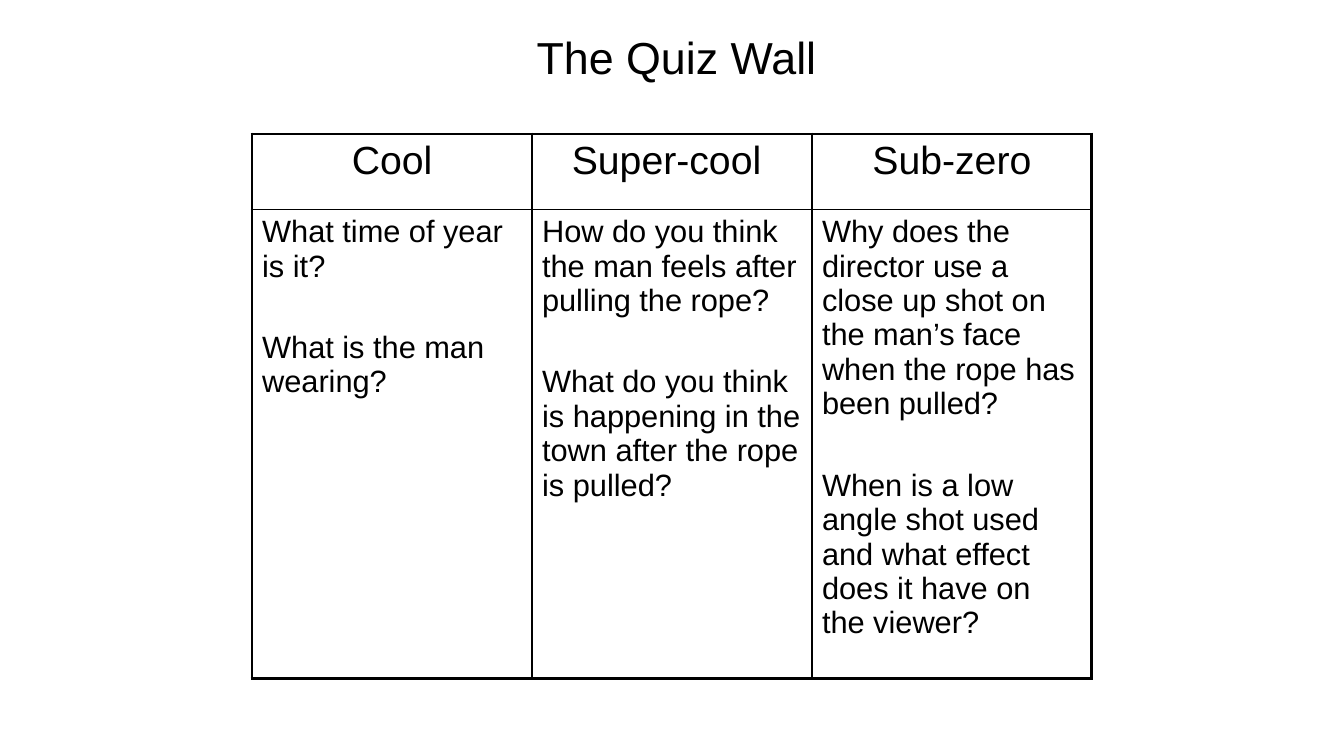
from dataclasses import dataclass

from lxml import etree
from pptx import Presentation, util as u
from pptx.dml.color import RGBColor
from pptx.enum import text
from pptx.oxml import ns


@dataclass(frozen=True)
class Theme:
    font: str = "Arial"
    ink: RGBColor = RGBColor(0, 0, 0)
    title_size: int = 32
    heading_size: int = 28
    question_size: int = 22
    question_gap: float = 33.5
    outer_line: float = 2.25
    inner_line: float = 1


THEME = Theme()
QUESTION_WALL = {
    "Cool": ["What time of year is it?", "What is the man wearing?"],
    "Super-cool ": [
        "How do you think the man feels after pulling the rope?",
        "What do you think is happening in the town after the rope is pulled?",
    ],
    "Sub-zero": [
        "Why does the director use a close up shot on the man’s face "
        "when the rope has been pulled?",
        "When is a low angle shot used and what effect does it have on the viewer?",
    ],
}


def write(paragraph, words, size, align):
    paragraph.alignment = align
    run = paragraph.add_run()
    run.text = words
    run.font.name = THEME.font
    run.font.size = u.Pt(size)
    run.font.color.rgb = THEME.ink


def set_borders(cell, widths):
    """Draw the left, right, top and bottom borders, widths in points."""
    properties = cell._tc.get_or_add_tcPr()
    for position, (side, width) in enumerate(zip("LRTB", widths)):
        border = etree.Element(ns.qn(f"a:ln{side}"), w=str(u.Pt(width)))
        fill = etree.SubElement(border, ns.qn("a:solidFill"))
        etree.SubElement(fill, ns.qn("a:srgbClr"), val=str(THEME.ink))
        properties.insert(position, border)


def add_title(slide, left, top, width, height):
    title = slide.shapes.add_textbox(*map(u.Inches, (left, top, width, height)))
    title.text_frame.word_wrap = True
    write(title.text_frame.paragraphs[0], "The Quiz Wall",
          THEME.title_size, text.PP_ALIGN.CENTER)


def add_wall(slide, left, top, width, height, heading_height=0.75):
    last = len(QUESTION_WALL) - 1
    wall = slide.shapes.add_table(
        2, len(QUESTION_WALL), *map(u.Inches, (left, top, width, height))).table
    wall.first_row = wall.horz_banding = False
    wall.rows[0].height = u.Inches(heading_height)
    wall.rows[1].height = u.Inches(height - heading_height)

    for column, (heading, questions) in enumerate(QUESTION_WALL.items()):
        wall.columns[column].width = u.Inches(width / len(QUESTION_WALL))
        heading_cell, question_cell = wall.cell(0, column), wall.cell(1, column)

        # Heading and its questions
        write(heading_cell.text_frame.paragraphs[0], heading,
              THEME.heading_size, text.PP_ALIGN.CENTER)
        frame = question_cell.text_frame
        for number, question in enumerate(questions):
            paragraph = frame.add_paragraph() if number else frame.paragraphs[0]
            if number:
                paragraph.space_before = u.Pt(THEME.question_gap)
            write(paragraph, question, THEME.question_size, text.PP_ALIGN.LEFT)

        # Heavy frame, fine inner lines
        for row, cell in enumerate((heading_cell, question_cell)):
            cell.fill.background()
            on_frame = (column == 0, column == last, row == 0, row == 1)
            set_borders(cell, [THEME.outer_line if outer else THEME.inner_line
                               for outer in on_frame])


def main():
    deck = Presentation()
    deck.slide_width, deck.slide_height = u.Inches(13.33), u.Inches(7.5)
    slide = deck.slides.add_slide(deck.slide_layouts[6])
    add_wall(slide, 2.5, 1.33, 8.33, 5.4)
    add_title(slide, 4.25, 0.25, 4.92, 0.63)
    deck.save("out.pptx")


if __name__ == "__main__":
    main()
